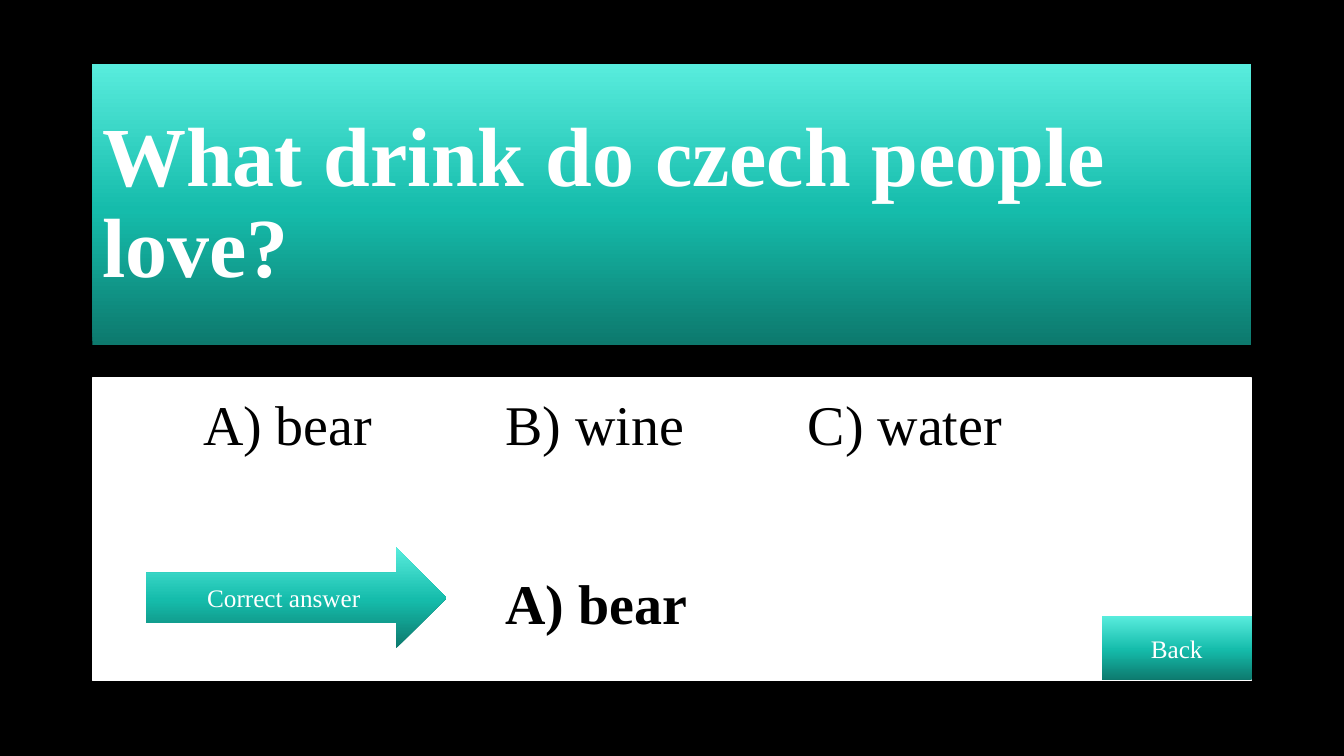
"""Build the quiz slide with its question, options, correct answer and back button."""
from copy import deepcopy

from lxml import etree
from pptx import Presentation
from pptx.dml.color import RGBColor
from pptx.enum.shapes import MSO_SHAPE
from pptx.enum.text import MSO_ANCHOR, PP_ALIGN
from pptx.oxml.ns import qn
from pptx.util import Pt

RECTANGLE, ARROW = MSO_SHAPE.RECTANGLE, MSO_SHAPE.RIGHT_ARROW
TOP, MIDDLE = MSO_ANCHOR.TOP, MSO_ANCHOR.MIDDLE
LEFT, CENTER = PP_ALIGN.LEFT, PP_ALIGN.CENTER
COLORS = {"black": "000000", "white": "FFFFFF",
          "deep": "0D796D", "teal": "15BCAB", "aqua": "58ECDD"}
GRADIENT = (("deep", 0), ("teal", 0.48), ("aqua", 1))
FONT = "Times New Roman"


def rgb(name):
    """Return the named colour."""
    return RGBColor.from_string(COLORS[name])


def add_panel(slide, kind, box, anchor=MIDDLE):
    """Add a shape without shadow or outline, ready for wrapped text."""
    panel = slide.shapes.add_shape(kind, *(Pt(length) for length in box))
    panel.shadow.inherit = False
    panel.line.fill.background()
    panel.text_frame.word_wrap = True
    panel.text_frame.vertical_anchor = anchor
    return panel


def fill_gradient(panel):
    """Fill a panel with the teal gradient, dark at the bottom."""
    panel.fill.gradient()
    panel.fill.gradient_angle = 90
    first = panel.element.spPr.find(".//" + qn("a:gs"))
    first.addnext(deepcopy(first))
    for stop, (name, position) in zip(panel.fill.gradient_stops, GRADIENT):
        stop.color.rgb = rgb(name)
        stop.position = position


def write(paragraph, text, size, color="white", bold=False, tabs=(), **layout):
    """Write one formatted paragraph with its tab stops."""
    for name, value in layout.items():
        setattr(paragraph, name, value)
    if tabs:
        stops = etree.SubElement(paragraph._p.get_or_add_pPr(), qn("a:tabLst"))
        for tab in tabs:
            etree.SubElement(stops, qn("a:tab"), pos=str(Pt(tab)), algn="l")
    run = paragraph.add_run()
    run.text = text
    formats = {"name": FONT, "size": Pt(size), "bold": bold}
    for name, value in formats.items():
        setattr(run.font, name, value)
    run.font.color.rgb = rgb(color)


def add_banner(slide, kind, box, text, size, **formats):
    """Add a gradient shape with white text."""
    banner = add_panel(slide, kind, box)
    fill_gradient(banner)
    write(banner.text_frame.paragraphs[0], text, size, **formats)


def add_answers(slide, box):
    """Add the white panel with the options and the correct answer."""
    answers = add_panel(slide, RECTANGLE, box, TOP)
    answers.fill.solid()
    answers.fill.fore_color.rgb = rgb("white")
    answers.line.color.rgb = rgb("white")
    answers.line.width = Pt(1)
    formats = {"size": 40, "color": "black", "alignment": LEFT, "line_spacing": 1.1}
    frame = answers.text_frame
    write(frame.paragraphs[0], "\tA) bear\tB) wine\tC) water",
          tabs=(72, 288, 504), space_before=Pt(10), **formats)
    write(frame.add_paragraph(), "\tA) bear", bold=True,
          tabs=(288,), space_before=Pt(75), **formats)


def main():
    """Build and save the slide."""
    deck = Presentation()
    deck.slide_width, deck.slide_height = Pt(960), Pt(540)
    slide = deck.slides.add_slide(deck.slide_layouts[6])
    slide.background.fill.solid()
    slide.background.fill.fore_color.rgb = rgb("black")
    add_banner(slide, RECTANGLE, (66, 46, 828, 200.5),
               "What drink do czech people love?", 60,
               bold=True, alignment=LEFT, line_spacing=0.9)
    add_answers(slide, (66, 270, 828, 216))
    add_banner(slide, RECTANGLE, (787, 440, 107, 46), "Back", 18, alignment=CENTER)
    add_banner(slide, ARROW, (104.4, 391, 214.6, 72), "Correct answer", 18,
               alignment=CENTER)
    deck.save("out.pptx")


if __name__ == "__main__":
    main()
